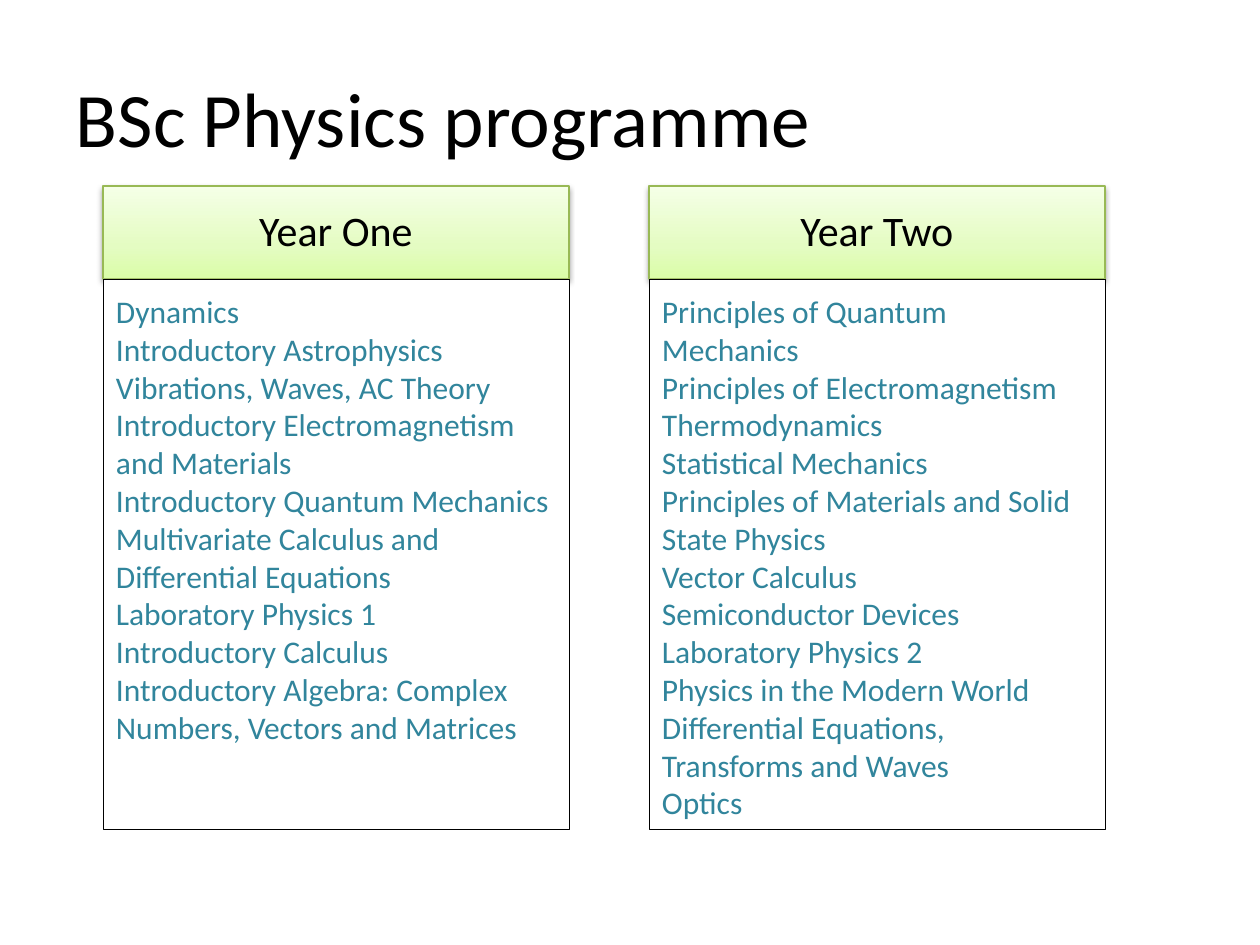
from dataclasses import dataclass

from lxml.etree import SubElement
from pptx import Presentation
from pptx.dml.color import RGBColor
from pptx.enum.shapes import MSO_SHAPE as Shape
from pptx.enum.text import MSO_ANCHOR as Anchor, PP_ALIGN as Align
from pptx.oxml.ns import qn
from pptx.util import Emu, Pt

PX_PER_INCH = 126
FONT = "Calibri"
BLACK, WHITE, TEAL, GREEN = "000000", "FFFFFF", "31859C", "98B955"
HEADER_STOPS = ((0, "DAFDA7"), (35, "E4FCC2"), (100, "F5FFE7"))
HEADER_TOP, HEADER_HEIGHT, COURSES_HEIGHT = 186, 93, 550


@dataclass
class Year:
    title: str
    left: int
    width: int
    courses: tuple[str, ...]


YEARS = (
    Year("Year One", 103, 466, (
        "Dynamics",
        "Introductory Astrophysics",
        "Vibrations, Waves, AC Theory",
        "Introductory Electromagnetism and Materials",
        "Introductory Quantum Mechanics",
        "Multivariate Calculus and Differential Equations",
        "Laboratory Physics 1",
        "Introductory Calculus",
        "Introductory Algebra: Complex Numbers, Vectors and Matrices",
    )),
    Year("Year Two", 649, 456, (
        "Principles of Quantum Mechanics",
        "Principles of Electromagnetism",
        "Thermodynamics",
        "Statistical Mechanics",
        "Principles of Materials and Solid State Physics",
        "Vector Calculus",
        "Semiconductor Devices",
        "Laboratory Physics 2",
        "Physics in the Modern World",
        "Differential Equations, Transforms and Waves",
        "Optics",
    )),
)


def px(length: int) -> Emu:
    return Emu(round(length * 914400 / PX_PER_INCH))


def rgb(colour: str) -> RGBColor:
    return RGBColor.from_string(colour)


def write(frame, lines, size: int, colour: str, insets, anchor=Anchor.TOP,
          align=Align.LEFT, spacing: float = 1.0) -> None:
    """Fill a text frame; insets run left, top, right, bottom."""
    frame.word_wrap = True
    frame.vertical_anchor = anchor
    (frame.margin_left, frame.margin_top,
     frame.margin_right, frame.margin_bottom) = map(px, insets)
    for index, line in enumerate(lines):
        paragraph = frame.add_paragraph() if index else frame.paragraphs[0]
        paragraph.alignment = align
        paragraph.line_spacing = spacing
        run = paragraph.add_run()
        run.text = line
        run.font.name = FONT
        run.font.size = Pt(size)
        run.font.color.rgb = rgb(colour)


def add_box(slide, left: int, top: int, width: int, height: int,
            line_colour: str, line_width: float):
    box = slide.shapes.add_shape(Shape.RECTANGLE, px(left), px(top), px(width), px(height))
    box.shadow.inherit = False
    box.line.color.rgb = rgb(line_colour)
    box.line.width = Pt(line_width)
    return box


def add_colour(parent, colour: str):
    return SubElement(parent, qn("a:srgbClr"), val=colour)


def shade_upwards(box, stops) -> None:
    box.fill.gradient()
    box.fill.gradient_angle = 90
    stop_list = box.element.spPr.find(".//" + qn("a:gsLst"))
    for old_stop in list(stop_list):
        stop_list.remove(old_stop)
    for percent, colour in stops:
        add_colour(SubElement(stop_list, qn("a:gs"), pos=str(percent * 1000)), colour)


def drop_shadow(box) -> None:
    effects = box.element.spPr.find(qn("a:effectLst"))
    shadow = SubElement(effects, qn("a:outerShdw"), blurRad=str(Pt(3.1)),
                        dist=str(Pt(1.6)), dir="5400000", rotWithShape="0")
    SubElement(add_colour(shadow, BLACK), qn("a:alpha"), val="38000")


def add_header(slide, year: Year) -> None:
    header = add_box(slide, year.left, HEADER_TOP, year.width, HEADER_HEIGHT, GREEN, 0.75)
    shade_upwards(header, HEADER_STOPS)
    drop_shadow(header)
    write(header.text_frame, [year.title], 24, BLACK, (24, 14, 24, 14),
          Anchor.MIDDLE, Align.CENTER, 0.9)


def add_courses(slide, year: Year) -> None:
    panel = add_box(slide, year.left, HEADER_TOP + HEADER_HEIGHT, year.width,
                    COURSES_HEIGHT, BLACK, 0.25)
    panel.fill.solid()
    panel.fill.fore_color.rgb = rgb(WHITE)
    write(panel.text_frame, year.courses, 18, TEAL, (13, 13, 18, 20))


def main() -> None:
    deck = Presentation()
    deck.slide_width, deck.slide_height = px(1260), px(945)
    slide = deck.slides.add_slide(deck.slide_layouts[6])
    title = slide.shapes.add_textbox(px(63), px(38), px(1134), px(158))
    write(title.text_frame, ["BSc Physics programme"], 44, BLACK,
          (13, 6, 13, 6), Anchor.MIDDLE)
    for year in YEARS:
        add_header(slide, year)
    for year in YEARS:
        add_courses(slide, year)
    deck.save("out.pptx")


if __name__ == "__main__":
    main()
